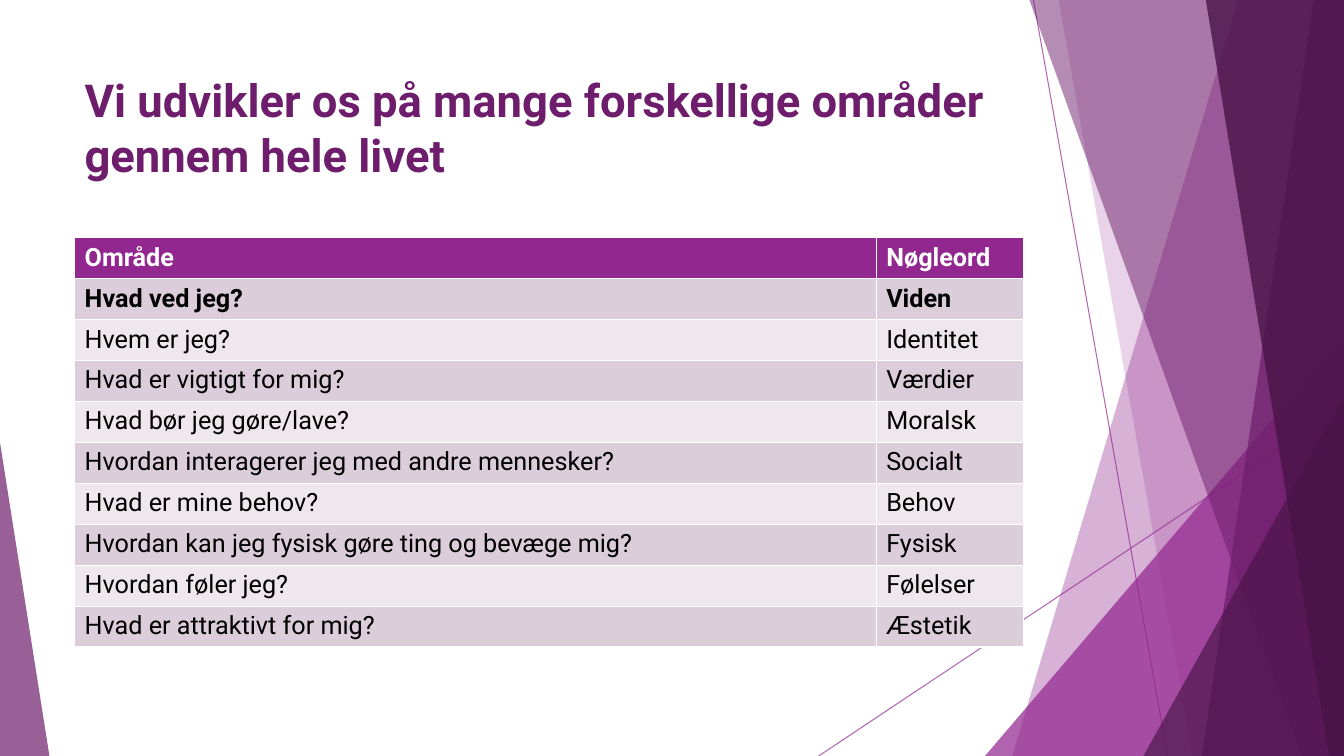
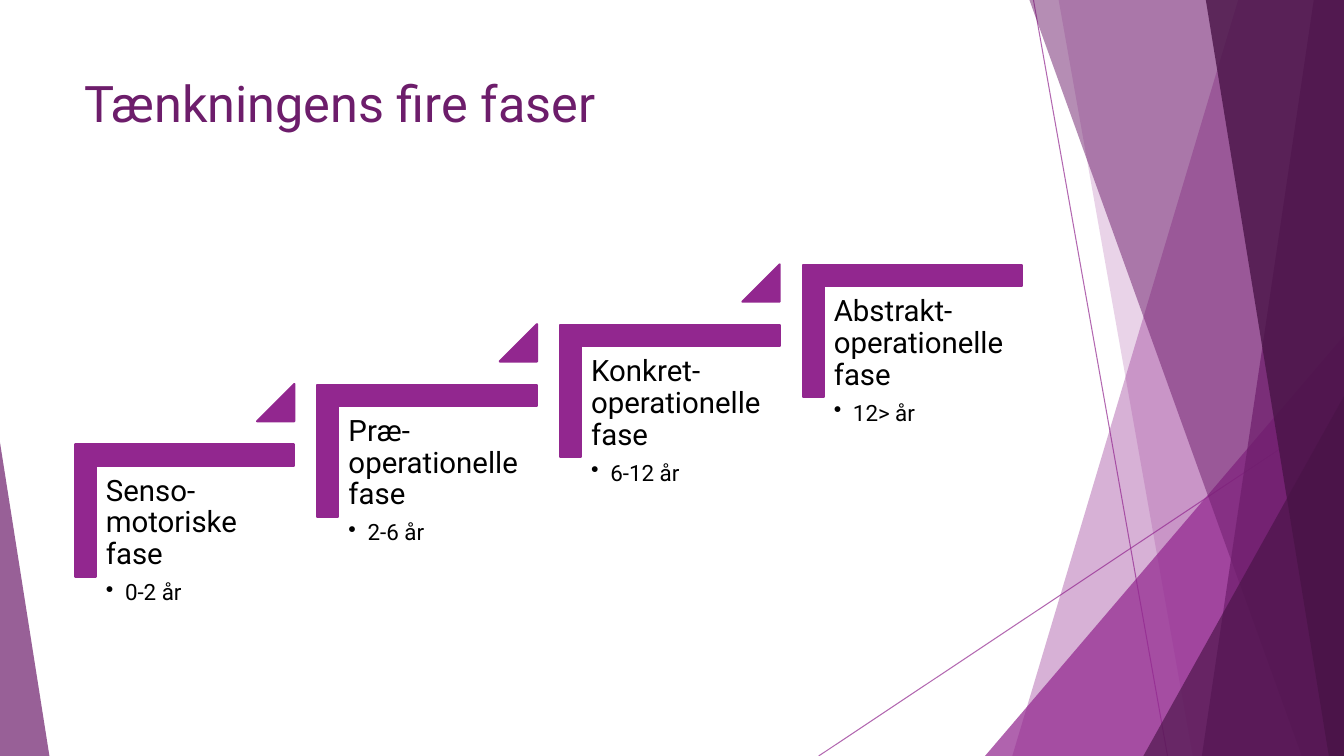
"""Build two slides on the areas of growth and the four phases of thought."""
from dataclasses import dataclass

from lxml import etree
from pptx import Presentation
from pptx.dml.color import RGBColor
from pptx.enum.shapes import MSO_CONNECTOR, MSO_SHAPE
from pptx.enum.text import MSO_ANCHOR
from pptx.oxml.ns import qn
from pptx.util import Inches, Pt

LINE = MSO_CONNECTOR.STRAIGHT
WEDGE = MSO_SHAPE.ISOSCELES_TRIANGLE
FRAME = MSO_SHAPE.HALF_FRAME
TOP = MSO_ANCHOR.TOP

WIDE, HIGH = 13.33, 7.5
LEFT, SPAN = 0.74, 9.4
FONT = "Roboto"
BRIGHT, DEEP, DARK = "92278F", "6D1D6B", "491447"
WHITE, BLACK = "FFFFFF", "000000"
ODD, EVEN = "DCCDDB", "EEE8EE"


@dataclass
class Ray:
    start: tuple[float, float]
    end: tuple[float, float]


@dataclass
class Band:
    top: float
    foot: float
    color: str
    alpha: int


@dataclass
class Peak:
    left: float
    top: float
    width: float
    tip: int
    color: str
    alpha: int


@dataclass
class Phase:
    name: str
    age: str


DECOR = [
    Ray((10.25, 0), (11.58, HIGH)),
    Ray((WIDE, 4.03), (8.12, HIGH)),
    Band(12.28, 10.04, BRIGHT, 36),
    Band(10.5, 11.83, BRIGHT, 20),
    Peak(9.77, 3.33, 3.56, 1, BRIGHT, 72),
    Band(10.21, 12.91, DEEP, 50),
    Band(13.03, 11.92, DEEP, 70),
    Band(11.96, 13.18, DARK, 80),
    Peak(11.34, 3.93, 1.99, 1, DARK, 66),
    Peak(0, 4.39, 0.49, 0, DEEP, 70),
]

AREAS = [
    ("Område", "Nøgleord"),
    ("Hvad ved jeg?", "Viden"),
    ("Hvem er jeg?", "Identitet"),
    ("Hvad er vigtigt for mig?", "Værdier"),
    ("Hvad bør jeg gøre/lave?", "Moralsk"),
    ("Hvordan interagerer jeg med andre mennesker?", "Socialt"),
    ("Hvad er mine behov?", "Behov"),
    ("Hvordan kan jeg fysisk gøre ting og bevæge mig?", "Fysisk"),
    ("Hvordan føler jeg?", "Følelser"),
    ("Hvad er attraktivt for mig?", "Æstetik"),
]

PHASES = [
    Phase("Senso-motoriske fase", "0-2 år"),
    Phase("Præ-operationelle fase", "2-6 år"),
    Phase("Konkret-operationelle fase", "6-12 år"),
    Phase("Abstrakt-operationelle fase", "12> år"),
]


def paint(target, color: str) -> None:
    target.fill.solid()
    target.fill.fore_color.rgb = RGBColor.from_string(color)


def fade(shape, alpha: int) -> None:
    for color in shape.element.spPr.iter(qn("a:srgbClr")):
        etree.SubElement(color, qn("a:alpha"), val=str(alpha * 1000))


def style(para, size: float, color: str, bold: bool = False) -> None:
    for run in para.runs:
        run.font.name = FONT
        run.font.size = Pt(size)
        run.font.bold = bold
        run.font.color.rgb = RGBColor.from_string(color)


def draw_ray(slide, ray: Ray) -> None:
    ends = [Inches(n) for n in (*ray.start, *ray.end)]
    line = slide.shapes.add_connector(LINE, *ends)
    line.line.width = Pt(0.75)
    line.line.color.rgb = RGBColor.from_string(BRIGHT)
    fade(line, 70)
    etree.SubElement(line.element.spPr, qn("a:effectLst"))


def draw_veil(slide, veil: Band | Peak) -> None:
    if isinstance(veil, Band):
        pen = slide.shapes.build_freeform(Inches(veil.top), 0)
        rest = [(WIDE, 0), (WIDE, HIGH), (veil.foot, HIGH)]
        pen.add_line_segments([(Inches(x), Inches(y)) for x, y in rest])
        shape = pen.convert_to_shape()
    else:
        shape = slide.shapes.add_shape(
            WEDGE, Inches(veil.left), Inches(veil.top),
            Inches(veil.width), Inches(HIGH - veil.top))
        shape.adjustments[0] = veil.tip
    shape.shadow.inherit = False
    shape.line.fill.background()
    paint(shape, veil.color)
    fade(shape, veil.alpha)


def add_page(deck, title: str, size: float, bold: bool):
    slide = deck.slides.add_slide(deck.slide_layouts[6])
    for item in DECOR:
        if isinstance(item, Ray):
            draw_ray(slide, item)
        else:
            draw_veil(slide, item)
    box = slide.shapes.add_textbox(
        Inches(LEFT), Inches(0.67), Inches(SPAN), Inches(1.44))
    frame = box.text_frame
    frame.word_wrap = True
    frame.vertical_anchor = TOP
    frame.text = title
    style(frame.paragraphs[0], size, DEEP, bold)
    return slide


def draw_table(slide) -> None:
    table = slide.shapes.add_table(
        len(AREAS), 2, Inches(LEFT), Inches(2.36),
        Inches(SPAN), Inches(4.06)).table
    for col, width in zip(table.columns, (7.95, 1.46)):
        col.width = Inches(width)
    for i, row in enumerate(AREAS):
        fill = BRIGHT if i == 0 else ODD if i % 2 else EVEN
        for j, text in enumerate(row):
            cell = table.cell(i, j)
            cell.text = text
            paint(cell, fill)
            style(cell.text_frame.paragraphs[0], 18,
                  BLACK if i else WHITE, i < 2)


def solid(slide, kind, left: float, top: float, width: float, height: float):
    shape = slide.shapes.add_shape(
        kind, Inches(left), Inches(top), Inches(width), Inches(height))
    shape.shadow.inherit = False
    paint(shape, BRIGHT)
    shape.line.color.rgb = RGBColor.from_string(BRIGHT)
    shape.line.width = Pt(1.5)
    return shape


def draw_phase(slide, phase: Phase, x: float, y: float, last: bool) -> None:
    long, short = 2.18, 1.31
    shift = (long - short) / 2
    step = solid(slide, FRAME, x + shift, y - shift, short, long)
    step.rotation = 90
    step.adjustments[0] = step.adjustments[1] = 0.16
    step.element.spPr.find(qn("a:prstGeom")).set("prst", "corner")

    box = slide.shapes.add_textbox(
        Inches(x + 0.22), Inches(y + 0.22), Inches(1.96), Inches(1.72))
    frame = box.text_frame
    frame.word_wrap = True
    frame.margin_left = frame.margin_right = Inches(0.09)
    frame.margin_top = frame.margin_bottom = Inches(0.09)
    frame.text = f"{phase.name}\n{phase.age}"
    name, age = frame.paragraphs
    name.line_spacing = age.line_spacing = 0.9
    name.space_after = Pt(7.4)
    age.level = 1
    props = age._p.get_or_add_pPr()
    props.set("marL", str(Inches(0.19)))
    props.set("indent", str(-Inches(0.19)))
    etree.SubElement(props, qn("a:buChar"), char="•")
    style(name, 21, BLACK)
    style(age, 16, BLACK)

    if not last:
        mark = solid(slide, WEDGE, x + 1.81, y - 0.6, 0.37, 0.37)
        mark.adjustments[0] = 1


def draw_steps(slide) -> None:
    last = len(PHASES) - 1
    over, rise = (SPAN - 2.18) / last, 1.78 / last
    for i, phase in enumerate(PHASES):
        draw_phase(slide, phase, LEFT + i * over, 4.41 - i * rise, i == last)


def main() -> None:
    deck = Presentation()
    deck.slide_width, deck.slide_height = Inches(WIDE), Inches(HIGH)
    title = "Vi udvikler os på mange forskellige områder gennem hele livet"
    draw_table(add_page(deck, title, 32.4, True))
    draw_steps(add_page(deck, "Tænkningens fire faser", 36, False))
    deck.save("out.pptx")


if __name__ == "__main__":
    main()
